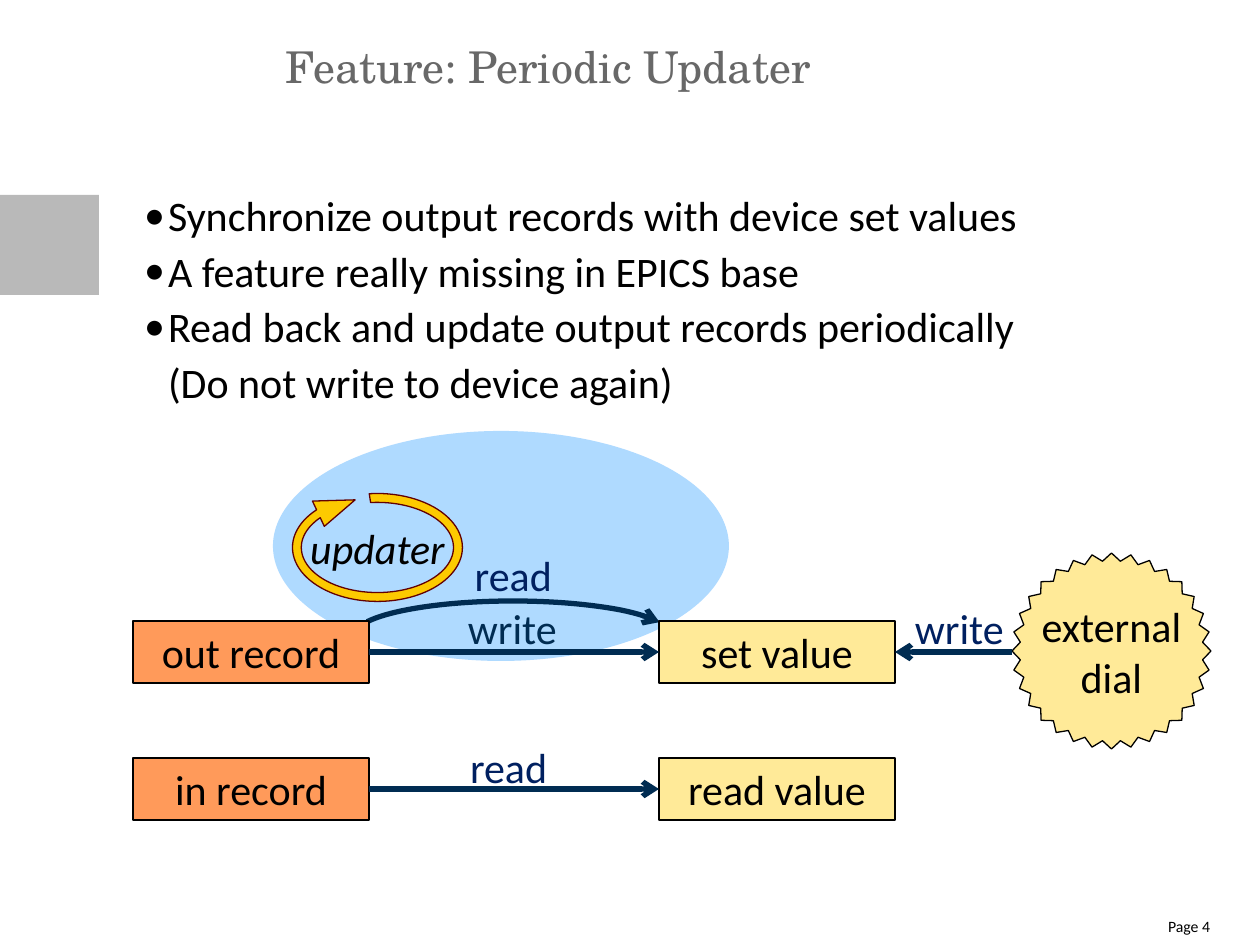
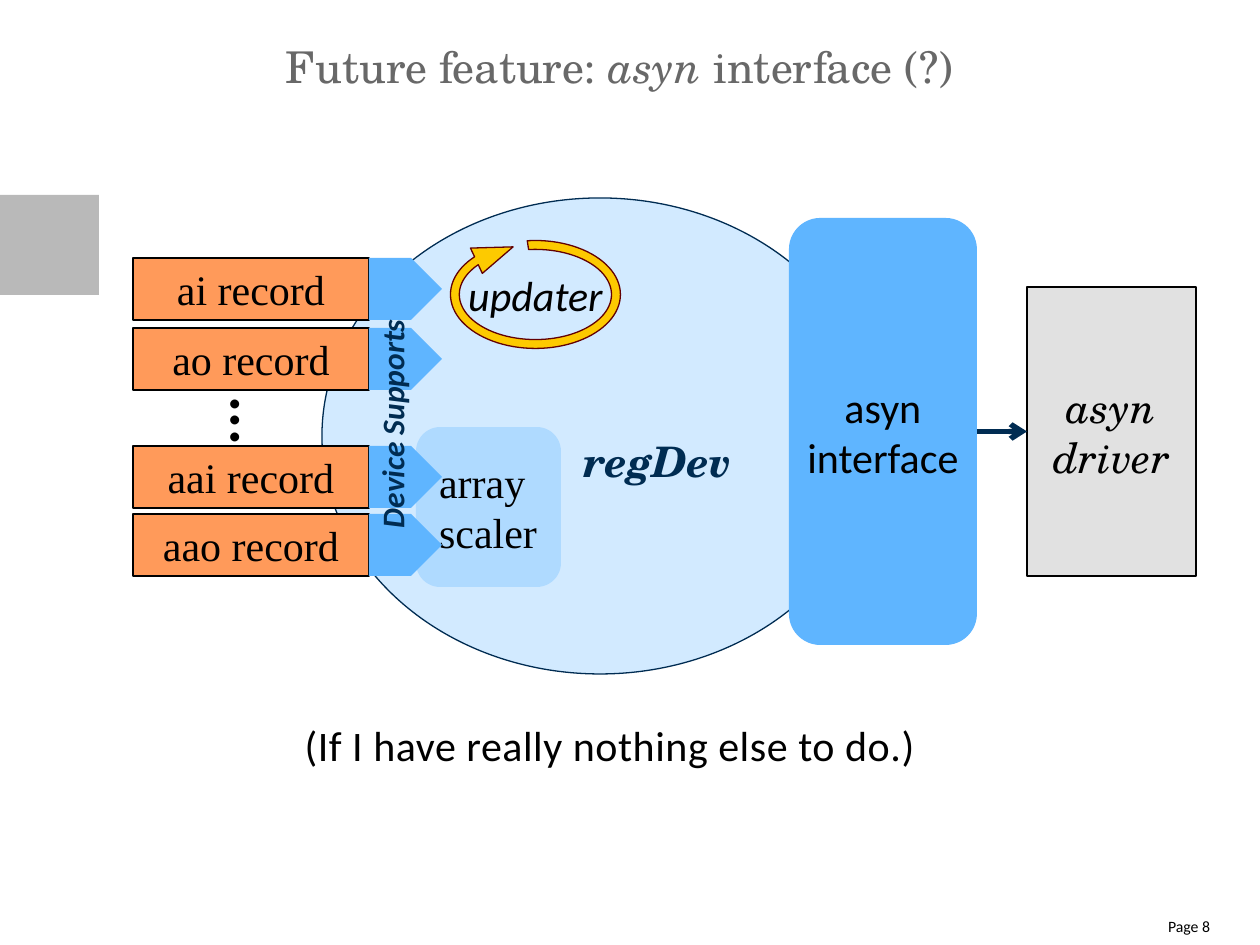
from lxml import etree
from pptx import Presentation
from pptx.dml.color import RGBColor
from pptx.enum.shapes import MSO_CONNECTOR, MSO_SHAPE
from pptx.enum.text import MSO_ANCHOR, PP_ALIGN
from pptx.oxml.ns import qn
from pptx.util import Pt

SCALE = 914400 / 126  # EMU per px

BLACK = RGBColor(0x00, 0x00, 0x00)
TITLE_GRAY = RGBColor(0x68, 0x68, 0x68)
BAND_GRAY = RGBColor(0xB9, 0xB9, 0xB9)
DRIVER_GRAY = RGBColor(0xE1, 0xE1, 0xE1)
NAVY = RGBColor(0x00, 0x2C, 0x52)
LABEL_BLUE = RGBColor(0x00, 0x20, 0x60)
PALE_BLUE = RGBColor(0xAF, 0xDA, 0xFF)
BRIGHT_BLUE = RGBColor(0x5F, 0xB5, 0xFF)
ORANGE = RGBColor(0xFF, 0x9A, 0x5A)
YELLOW = RGBColor(0xFF, 0xEA, 0x98)
GOLD = RGBColor(0xFD, 0xCA, 0x00)
MAROON = RGBColor(0x62, 0x00, 0x03)

SANS, SCHOLA, TIMES = "Calibri", "TeX Gyre Schola", "Times New Roman"
LEFT, CENTER, RIGHT = PP_ALIGN.LEFT, PP_ALIGN.CENTER, PP_ALIGN.RIGHT
TOP, MIDDLE, BOTTOM = MSO_ANCHOR.TOP, MSO_ANCHOR.MIDDLE, MSO_ANCHOR.BOTTOM
RECT, ELLIPSE, ROUNDED = MSO_SHAPE.RECTANGLE, MSO_SHAPE.OVAL, MSO_SHAPE.ROUNDED_RECTANGLE
PROCESS, STAR, PENTAGON = MSO_SHAPE.FLOWCHART_PROCESS, MSO_SHAPE.STAR_32_POINT, MSO_SHAPE.PENTAGON
ARC, CIRCULAR_ARROW = MSO_SHAPE.ARC, MSO_SHAPE.CIRCULAR_ARROW
STRAIGHT = MSO_CONNECTOR.STRAIGHT
LEFT_SIDE, RIGHT_SIDE = 1, 3
NO_INSETS = (0, 0, 0, 0)


def px(*lengths):
    return [round(length * SCALE) for length in lengths]


def write(shape, text, font=SANS, size=24, color=BLACK, bold=False, align=LEFT, anchor=TOP,
          insets=(13, 6, 13, 6), wrap=True, line_spacing=None, bullet=None, spacing=None):
    """Newline starts a paragraph, \\v breaks a line, *stars* enclose italics."""
    frame = shape.text_frame
    frame.word_wrap = wrap
    frame.vertical_anchor = anchor
    (frame.margin_left, frame.margin_top,
     frame.margin_right, frame.margin_bottom) = px(*insets)
    for number, content in enumerate(text.split("\n")):
        paragraph = frame.add_paragraph() if number else frame.paragraphs[0]
        if bullet:
            properties = paragraph._p.get_or_add_pPr()
            indent, = px(24)
            properties.set("marL", str(indent))
            properties.set("indent", str(-indent))
            etree.SubElement(properties, qn("a:buFont"), typeface=font)
            etree.SubElement(properties, qn("a:buChar"), char=bullet)
        paragraph.alignment = align
        paragraph.line_spacing = line_spacing
        for position, part in enumerate(content.split("*")):
            for line_number, line in enumerate(part.split("\v")):
                if line_number:
                    paragraph.add_line_break()
                if not line:
                    continue
                run = paragraph.add_run()
                run.text = line
                run.font.name = font
                run.font.size = Pt(size)
                run.font.color.rgb = color
                run.font.bold = bold
                run.font.italic = position % 2 == 1
                if spacing:
                    run.font._element.set("spc", str(spacing))


def add_block(slide, kind, box, fill=None, outline=None):
    shape = slide.shapes.add_shape(kind, *px(*box))
    shape.shadow.inherit = False
    if fill is None:
        shape.fill.background()
    else:
        shape.fill.solid()
        shape.fill.fore_color.rgb = fill
    if outline is None:
        shape.line.fill.background()
    else:
        shape.line.color.rgb = outline
        shape.line.width = Pt(0.75)
    return shape


presentation = Presentation()
presentation.slide_width, presentation.slide_height = px(1260, 945)

# Shared band, title and page number
slides = []
for title, page in [("Feature: Periodic Updater", 4),
                    ("Future feature: *asyn* interface (?)", 8)]:
    slide = presentation.slides.add_slide(presentation.slide_layouts[6])
    add_block(slide, RECT, (0, 195, 99, 100), BAND_GRAY)
    write(slide.shapes.add_textbox(*px(286, 40, 925, 71)), title,
          font=SCHOLA, size=25, color=TITLE_GRAY, insets=NO_INSETS)
    write(slide.shapes.add_textbox(*px(1130, 917, 80, 28)), f"Page {page}",
          size=9, align=RIGHT, insets=NO_INSETS)
    slides.append(slide)
updater_slide, asyn_slide = slides
arrows = []

# Periodic updater: background ellipse and curved read arrow
add_block(updater_slide, ELLIPSE, (273, 431, 456, 230), PALE_BLUE)
read_arc = add_block(updater_slide, ARC, (354, 601, 318, 69), outline=NAVY)
read_arc.adjustments[0] = 111.23
read_arc.adjustments[1] = 212.88
write(read_arc, "read", color=LABEL_BLUE, align=CENTER, anchor=BOTTOM, insets=(10, 6, 10, 30))
arrows.append(read_arc)

# Periodic updater: bullets
write(updater_slide.shapes.add_textbox(*px(144, 185, 1067, 645)),
      "Synchronize output records with device set values\n"
      "A feature really missing in EPICS base\n"
      "Read back and update output records periodically\v(Do not write to device again)",
      insets=NO_INSETS, line_spacing=1.1, bullet="•")

# Periodic updater: records joined to device values
device_values = []
for top, record_name, value_name in [(621, "out record", "set value"),
                                     (758, "in record", "read value")]:
    record = add_block(updater_slide, RECT, (133, top, 236, 62), ORANGE, BLACK)
    value = add_block(updater_slide, PROCESS, (659, top, 236, 62), YELLOW, BLACK)
    write(record, record_name, align=CENTER, anchor=MIDDLE)
    write(value, value_name, align=CENTER, anchor=MIDDLE)
    arrow = updater_slide.shapes.add_connector(STRAIGHT, *px(369, top + 31, 659, top + 31))
    arrow.begin_connect(record, RIGHT_SIDE)
    arrow.end_connect(value, LEFT_SIDE)
    arrows.append(arrow)
    device_values.append(value)

# Periodic updater: external dial
dial = add_block(updater_slide, STAR, (1012, 553, 199, 196), YELLOW, BLACK)
dial.adjustments[0] = 0.46
write(dial, "external\vdial", align=CENTER, anchor=MIDDLE, insets=(0, 6, 0, 6), wrap=False)
dial_arrow = updater_slide.shapes.add_connector(STRAIGHT, *px(1012, 652, 895, 652))
dial_arrow.end_connect(device_values[0], RIGHT_SIDE)
arrows.append(dial_arrow)

# Periodic updater: arrow labels
for label, left, top, color in [("read", 457, 736, LABEL_BLUE),
                                ("write", 455, 597, NAVY),
                                ("write", 902, 597, LABEL_BLUE)]:
    write(updater_slide.shapes.add_textbox(*px(left, top, 120, 63)), label,
          color=color, insets=(13, 6, 0, 6), wrap=False)

# Asyn interface: regDev core and array scaler
core = add_block(asyn_slide, ELLIPSE, (322, 198, 556, 476), PALE_BLUE, NAVY)
core_color = core.element.spPr.find(qn("a:solidFill"))[0]
etree.SubElement(core_color, qn("a:alpha"), val="56000")
write(core, "*regDev*", font=SCHOLA, color=NAVY, bold=True, align=CENTER, anchor=MIDDLE,
      insets=(116, 49, 0, 0), wrap=False)
scaler = add_block(asyn_slide, ROUNDED, (416, 427, 145, 160), PALE_BLUE)
write(scaler, "array scaler", font=TIMES, anchor=MIDDLE, insets=(16, 6, 10, 6))

# Asyn interface: records with their device supports
for record_type, top in [("ai", 258), ("ao", 328), ("aai", 446), ("aao", 514)]:
    record = add_block(asyn_slide, RECT, (133, top, 236, 62), ORANGE, BLACK)
    write(record, f"{record_type} record", font=TIMES, align=CENTER, anchor=MIDDLE)
    add_block(asyn_slide, PENTAGON, (369, top, 73, 62), BRIGHT_BLUE)

dots = asyn_slide.shapes.add_textbox(*px(223, 382, 50, 79))
dots.rotation = 90
write(dots, "···", size=36, insets=NO_INSETS, wrap=False, line_spacing=1.1, spacing=30)
supports = asyn_slide.shapes.add_textbox(*px(265, 389, 254, 50))
supports.rotation = 270
write(supports, "*Device Supports*", size=18, color=NAVY, bold=True)

# Asyn interface: interface joined to the driver
interface = add_block(asyn_slide, ROUNDED, (789, 218, 188, 427), BRIGHT_BLUE)
write(interface, "asyn\vinterface", align=CENTER, anchor=MIDDLE, insets=(0, 6, 0, 6))
driver = add_block(asyn_slide, RECT, (1027, 287, 169, 289), DRIVER_GRAY, BLACK)
write(driver, "*asyn*\n*driver*", font=SCHOLA, align=CENTER, anchor=MIDDLE)
driver_arrow = asyn_slide.shapes.add_connector(STRAIGHT, *px(977, 432, 1027, 432))
driver_arrow.begin_connect(interface, RIGHT_SIDE)
driver_arrow.end_connect(driver, LEFT_SIDE)
arrows.append(driver_arrow)

write(asyn_slide.shapes.add_textbox(*px(302, 714, 616, 55)),
      "(If I have really nothing else to do.)",
      align=CENTER, insets=NO_INSETS, wrap=False, line_spacing=1.1, spacing=30)

# Updater loop on both slides
for slide, left, top in [(updater_slide, 283, 484), (asyn_slide, 441, 231)]:
    updater = add_block(slide, CIRCULAR_ARROW, (left, top, 189, 127), GOLD, MAROON)
    for index, value in enumerate((0.07, 21.09, 125.84, 156.81, 0.11)):
        updater.adjustments[index] = value
    write(updater, "*updater*", align=CENTER, anchor=MIDDLE, wrap=False)

# Arrow style
for arrow in arrows:
    arrow.line.color.rgb = NAVY
    arrow.line.width = Pt(3)
    properties = arrow.element.spPr
    etree.SubElement(properties.find(qn("a:ln")), qn("a:tailEnd"), type="arrow")
    if properties.find(qn("a:effectLst")) is None:
        etree.SubElement(properties, qn("a:effectLst"))

presentation.save("out.pptx")
